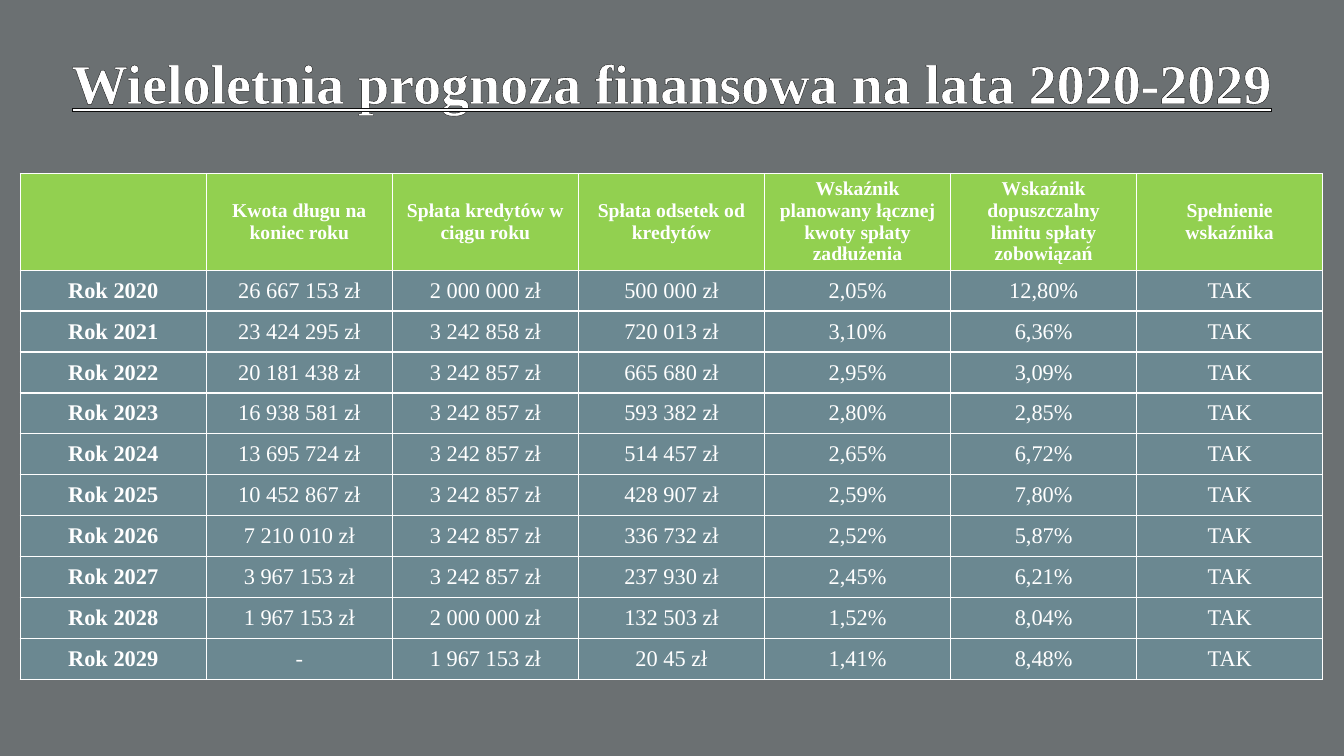
"""Build the slide with the multi-year financial forecast table."""
from dataclasses import astuple, dataclass

from lxml import etree
from pptx import Presentation
from pptx.dml.color import RGBColor
from pptx.enum.text import MSO_ANCHOR, MSO_AUTO_SIZE, PP_ALIGN
from pptx.oxml.ns import qn
from pptx.util import Inches, Pt

CENTER = PP_ALIGN.CENTER
MIDDLE = MSO_ANCHOR.MIDDLE
NO_AUTOFIT = MSO_AUTO_SIZE.NONE

FONT = "Times New Roman"
BACKGROUND = "6B7072"
WHITE = "FFFFFF"
OUTLINE = "0D0D0D"
HEADER_GREEN = "92D050"
BODY_TEAL = "6B8891"

TABLE_WIDTH = Inches(12.92)
HEADER_HEIGHT = Inches(0.96)
BODY_HEIGHT = Inches(4.06)


@dataclass(frozen=True)
class YearForecast:
    """One table row: a year with its debt, repayments and ratios."""

    year: str
    debt: str
    loan_repayment: str
    interest: str
    planned_ratio: str
    allowed_ratio: str
    fulfilled: str = "TAK"


HEADINGS = (
    "",
    "Kwota długu na koniec roku",
    "Spłata kredytów w ciągu roku",
    "Spłata odsetek od kredytów",
    "Wskaźnik planowany łącznej kwoty spłaty zadłużenia",
    "Wskaźnik dopuszczalny limitu spłaty zobowiązań",
    "Spełnienie wskaźnika",
)
FORECASTS = (
    YearForecast("Rok 2020", "26 667 153 zł", "2 000 000 zł", "500 000 zł", "2,05%", "12,80%"),
    YearForecast("Rok 2021", "23 424 295 zł", "3 242 858 zł", "720 013 zł", "3,10%", "6,36%"),
    YearForecast("Rok 2022", "20 181 438 zł", "3 242 857 zł", "665 680 zł", "2,95%", "3,09%"),
    YearForecast("Rok 2023", "16 938 581 zł", "3 242 857 zł", "593 382 zł", "2,80%", "2,85%"),
    YearForecast("Rok 2024", "13 695 724 zł", "3 242 857 zł", "514 457 zł", "2,65%", "6,72%"),
    YearForecast("Rok 2025", "10 452 867 zł", "3 242 857 zł", "428 907 zł", "2,59%", "7,80%"),
    YearForecast("Rok 2026", "7 210 010 zł", "3 242 857 zł", "336 732 zł", "2,52%", "5,87%"),
    YearForecast("Rok 2027", "3 967 153 zł", "3 242 857 zł", "237 930 zł", "2,45%", "6,21%"),
    YearForecast("Rok 2028", "1 967 153 zł", "2 000 000 zł", "132 503 zł", "1,52%", "8,04%"),
    YearForecast("Rok 2029", "-", "1 967 153 zł", "20 45 zł", "1,41%", "8,48%"),
)


def set_solid(fill, color: str) -> None:
    """Make a fill solid in a hex colour."""
    fill.solid()
    fill.fore_color.rgb = RGBColor.from_string(color)


def format_paragraph(paragraph, size: int, bold: bool) -> None:
    """Centre a paragraph and set its white serif font."""
    paragraph.alignment = CENTER
    font = paragraph.font
    font.name = FONT
    font.size = Pt(size)
    font.bold = bold
    set_solid(font.fill, WHITE)


def add_line(parent, tag: str, color: str) -> None:
    """Append a one-point solid line element to a properties element."""
    line = etree.SubElement(parent, qn(tag), w=str(Pt(1)))
    solid = etree.SubElement(line, qn("a:solidFill"))
    etree.SubElement(solid, qn("a:srgbClr"), val=color)


def add_title(slide) -> None:
    """Place the outlined, underlined slide title."""
    title = slide.shapes.title
    title.left, title.top = Inches(0.09), Inches(0.37)
    title.width, title.height = Inches(13.14), Inches(0.96)
    frame = title.text_frame
    frame.text = "Wieloletnia prognoza finansowa na lata 2020-2029"
    frame.word_wrap = True
    frame.auto_size = NO_AUTOFIT
    frame.vertical_anchor = MIDDLE
    heading = frame.paragraphs[0]
    heading.line_spacing = 0.9
    format_paragraph(heading, 40, True)
    heading.font.underline = True
    add_line(heading.runs[0]._r.get_or_add_rPr(), "a:ln", OUTLINE)


def fill_cell(cell, text: str, color: str, size: int, bold: bool) -> None:
    """Write one bordered and filled table cell."""
    cell.text = text
    cell.vertical_anchor = MIDDLE
    format_paragraph(cell.text_frame.paragraphs[0], size, bold)
    properties = cell._tc.get_or_add_tcPr()
    for side in ("a:lnL", "a:lnR", "a:lnT", "a:lnB"):
        add_line(properties, side, WHITE)
    set_solid(cell.fill, color)


def add_forecast_table(slide) -> None:
    """Add the header row and one row for each forecast year."""
    table = slide.shapes.add_table(
        len(FORECASTS) + 1, len(HEADINGS), Inches(0.2), Inches(1.72),
        TABLE_WIDTH, HEADER_HEIGHT + BODY_HEIGHT,
    ).table
    table.horz_banding = False
    for column in table.columns:
        column.width = TABLE_WIDTH // len(HEADINGS)
    for row in table.rows:
        row.height = BODY_HEIGHT // len(FORECASTS)
    table.rows[0].height = HEADER_HEIGHT

    for column_index, heading in enumerate(HEADINGS):
        fill_cell(table.cell(0, column_index), heading, HEADER_GREEN, 14, True)
    for row_index, forecast in enumerate(FORECASTS, start=1):
        for column_index, value in enumerate(astuple(forecast)):
            fill_cell(table.cell(row_index, column_index), value, BODY_TEAL, 16, column_index == 0)


def main() -> None:
    """Create and save the presentation."""
    presentation = Presentation()
    presentation.slide_width = Inches(13.33)
    presentation.slide_height = Inches(7.5)
    slide = presentation.slides.add_slide(presentation.slide_layouts[5])
    set_solid(slide.background.fill, BACKGROUND)
    add_title(slide)
    add_forecast_table(slide)
    presentation.save("out.pptx")


if __name__ == "__main__":
    main()
